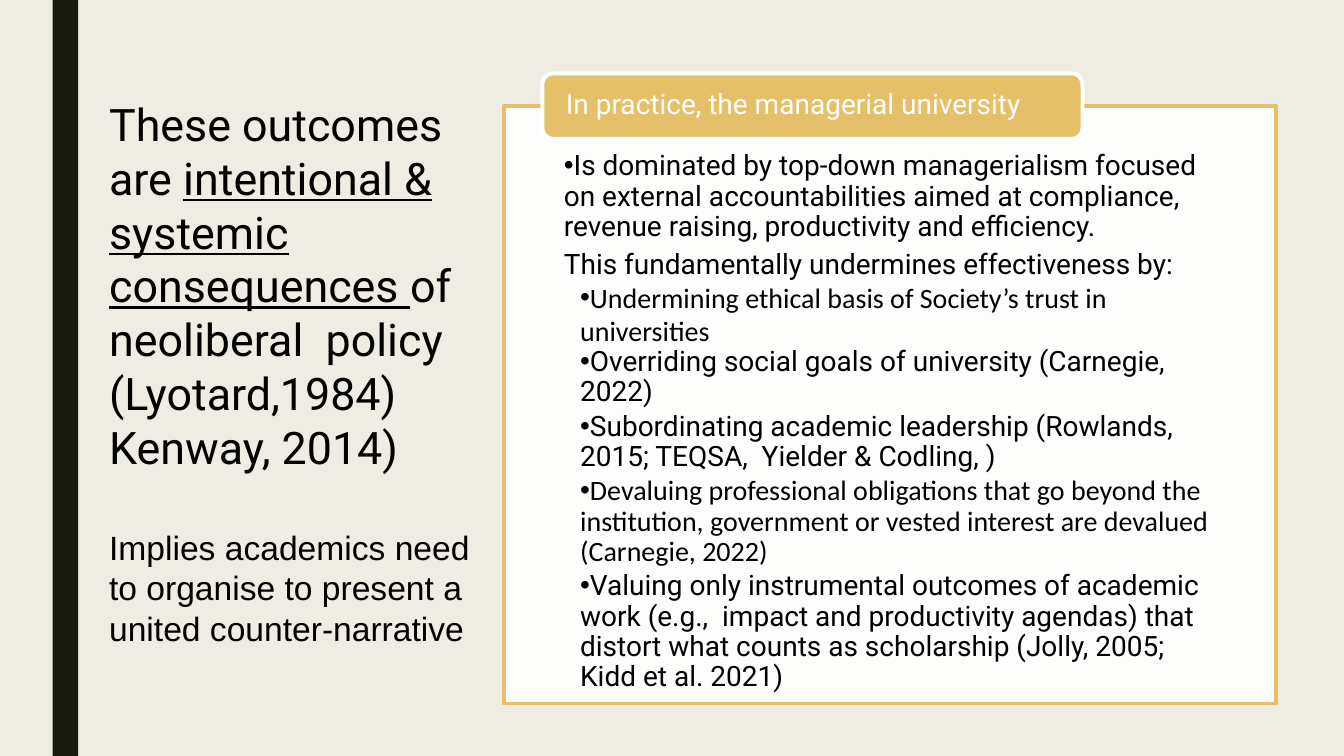
"""Build a slide on the outcomes of the managerial university."""
from dataclasses import dataclass

from lxml import etree
from pptx import Presentation
from pptx.dml.color import RGBColor
from pptx.enum.shapes import MSO_SHAPE
from pptx.enum.text import MSO_ANCHOR, MSO_AUTO_SIZE, PP_ALIGN
from pptx.oxml.ns import qn
from pptx.util import Cm, Pt

RECT, ROUND = MSO_SHAPE.RECTANGLE, MSO_SHAPE.ROUNDED_RECTANGLE
TOP, MID = MSO_ANCHOR.TOP, MSO_ANCHOR.MIDDLE
LEFT, FIXED = PP_ALIGN.LEFT, MSO_AUTO_SIZE.NONE


@dataclass(frozen=True)
class Theme:
    """Colours, fonts and sizes."""
    paper: str = "EFEDE3"
    dark: str = "191B0E"
    gold: str = "E6C069"
    white: str = "FFFFFF"
    black: str = "000000"
    main: str = "Roboto"
    alt: str = "Calibri"
    sans: str = "Arial"
    head: int = 32
    note: int = 24
    text: int = 20
    edge: float = 2.75


theme = Theme()


def add_run(par, text, size, font, color=theme.black, under=False):
    """Add one styled run."""
    run = par.add_run()
    run.text = text
    run.font.size = Pt(size)
    run.font.name = font
    run.font.underline = under
    run.font.color.rgb = RGBColor.from_string(color)


def add_box(kind, box, fill, line=None):
    """Add a flat shape."""
    shape = slide.shapes.add_shape(kind, *map(Cm, box))
    shape.shadow.inherit = False
    shape.fill.solid()
    shape.fill.fore_color.rgb = RGBColor.from_string(fill)
    if line:
        shape.line.color.rgb = RGBColor.from_string(line)
        shape.line.width = Pt(theme.edge)
    else:
        shape.line.fill.background()
    return shape


deck = Presentation()
deck.slide_width, deck.slide_height = Cm(33.87), Cm(19.05)
slide = deck.slides.add_slide(deck.slide_layouts[1])
slide.background.fill.solid()
slide.background.fill.fore_color.rgb = RGBColor.from_string(theme.paper)
title, points = slide.placeholders

add_box(RECT, (1.33, 0, 0.64, 19.05), theme.dark)
frame = add_box(RECT, (12.7, 2.67, 19.46, 15.06), theme.white, theme.gold)
tint = frame.fill._xPr.find(qn("a:solidFill"))[0]
etree.SubElement(tint, qn("a:alpha"), val="90000")

for holder, box, pad in (
    (title, (2.5, 2.31, 9.65, 7.47), (0.25, 0.13, 0.25, 0.13)),
    (points, (12.7, 2.67, 19.46, 15.06), (1.51, 1.15, 1.5, 0.41)),
):
    slide.shapes._spTree.append(holder.element)
    holder.left, holder.top, holder.width, holder.height = map(Cm, box)
    body = holder.text_frame
    body.word_wrap, body.auto_size = True, FIXED
    body.vertical_anchor = TOP
    (body.margin_left, body.margin_top,
     body.margin_right, body.margin_bottom) = map(Cm, pad)

par = title.text_frame.paragraphs[0]
par.alignment = LEFT
for text, under, stop in (
    ("These outcomes are ", False, False),
    ("intentional & systemic consequences ", True, False),
    ("of  neoliberal  policy", False, True),
    ("(Lyotard,1984)", False, True),
    ("Kenway, 2014)", False, False),
):
    add_run(par, text, theme.head, theme.main, under=under)
    if stop:
        par.add_line_break()
par = title.text_frame.add_paragraph()
par.alignment = LEFT
par.space_before = Pt(38.3)
add_run(par, "Implies academics need to organise to present a "
        "united counter-narrative", theme.note, theme.sans)

items = (
    ("Is dominated by top-down managerialism focused on external "
     "accountabilities aimed at compliance, revenue raising, productivity "
     "and efficiency.", theme.main, 0, True, True),
    ("This fundamentally undermines effectiveness by:",
     theme.main, 0, False, False),
    ("Undermining ethical basis of Society’s trust in universities",
     theme.alt, 0.41, True, False),
    ("Overriding social goals of university (Carnegie, 2022)",
     theme.main, 0.41, True, True),
    ("Subordinating academic leadership (Rowlands, 2015; TEQSA,  "
     "Yielder & Codling, )", theme.main, 0.41, True, True),
    ("Devaluing professional obligations that go beyond the institution, "
     "government or vested interest are devalued (Carnegie, 2022)",
     theme.alt, 0.41, True, True),
    ("Valuing only instrumental outcomes of academic work (e.g.,  impact "
     "and productivity agendas) that distort what counts as scholarship "
     "(Jolly, 2005; Kidd et al. 2021)", theme.main, 0.41, True, True),
)
body = points.text_frame
for row, (text, font, inset, dot, tight) in enumerate(items):
    par = body.add_paragraph() if row else body.paragraphs[0]
    par.alignment = LEFT
    par.line_spacing = 0.9 if tight else 1.0
    par.space_before = Pt(0)
    par.space_after = Pt(3 if tight else 0)
    props = par._p.get_or_add_pPr()
    props.set("marL", str(Cm(inset)))
    props.set("indent", "0")
    if dot:
        etree.SubElement(props, qn("a:buChar"), char="•")
    else:
        etree.SubElement(props, qn("a:buNone"))
    add_run(par, text, theme.text, font)

tab = add_box(ROUND, (13.67, 1.85, 13.61, 1.65), theme.gold, theme.white)
body = tab.text_frame
body.word_wrap, body.vertical_anchor = True, MID
body.margin_left = body.margin_right = Cm(0.51)
body.margin_top, body.margin_bottom = Cm(0), Cm(0.05)
par = body.paragraphs[0]
par.alignment, par.line_spacing = LEFT, 0.9
add_run(par, "In practice, the managerial university",
        theme.text, theme.main, theme.white)

deck.save("out.pptx")
